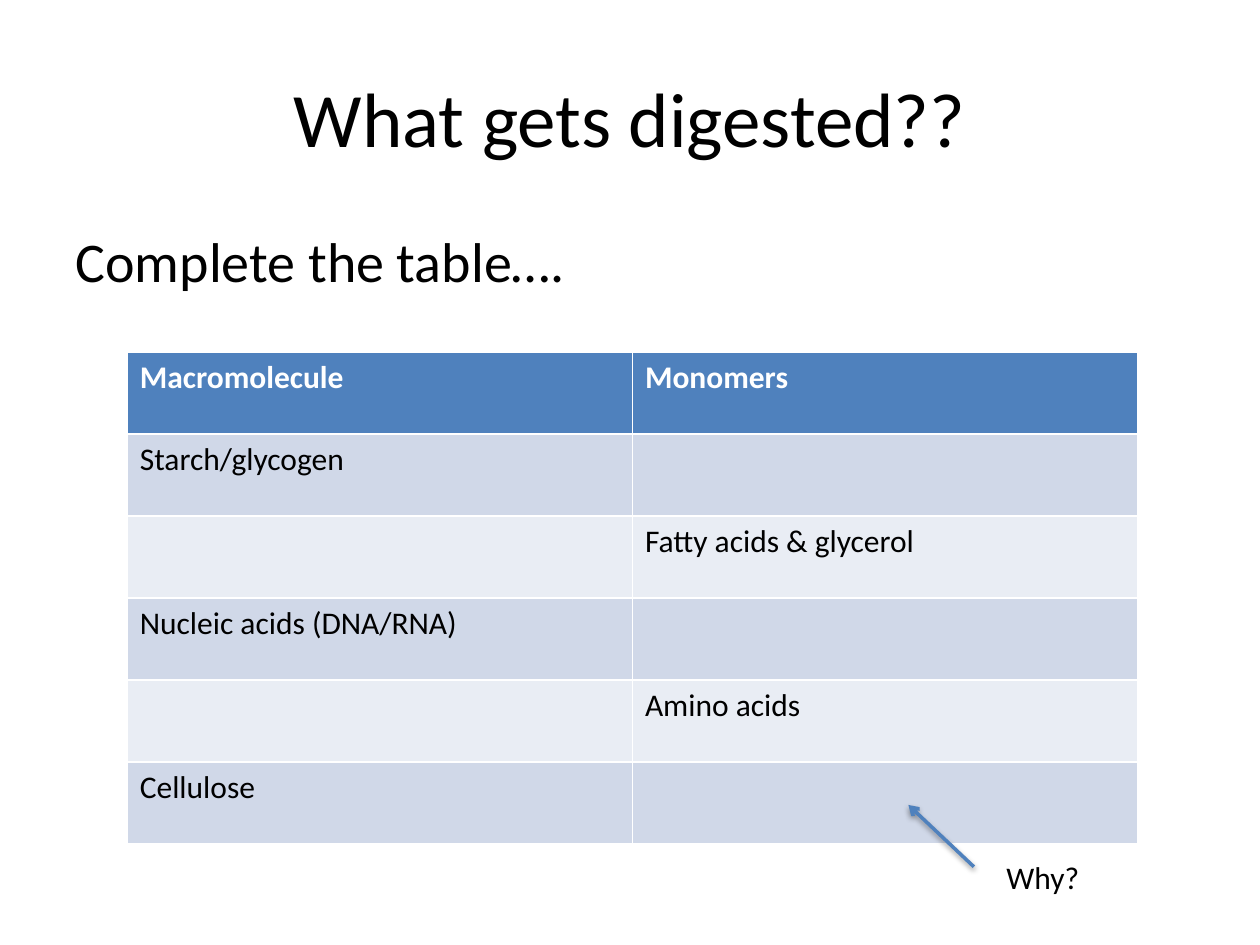
import pptx
import pptx.dml.color
import pptx.enum.shapes
import pptx.enum.text
import pptx.oxml
import pptx.util
from pptx.util import Pt

BLACK, WHITE, BLUE = "000000", "FFFFFF", "4F81BD"
BANDS = ["D0D8E8", "E9EDF4"]
ROWS = [
    ("Macromolecule", "Monomers"),
    ("Starch/glycogen", ""),
    ("", "Fatty acids & glycerol"),
    ("Nucleic acids (DNA/RNA)", ""),
    ("", "Amino acids"),
    ("Cellulose", ""),
]


def colour(value):
    return pptx.dml.color.RGBColor.from_string(value)


def write(frame, text, size, ink=BLACK, bold=False):
    para = frame.paragraphs[0]
    span = para.add_run()
    span.text = text
    formats = {"name": "Calibri", "size": Pt(size), "bold": bold}
    for name, value in formats.items():
        setattr(span.font, name, value)
    span.font.color.rgb = colour(ink)
    return para


def place(shape, box):
    for name, value in zip(("left", "top", "width", "height"), box):
        setattr(shape, name, Pt(value))


def add_title(page, box):
    title = page.shapes.title
    place(title, box)
    para = write(title.text_frame, "What gets digested??", 44)
    para.alignment = pptx.enum.text.PP_ALIGN.CENTER


def add_instruction(page, box):
    body = page.placeholders[1]
    place(body, box)
    para = write(body.text_frame, "Complete the table….", 32)
    properties = para._p.get_or_add_pPr()
    properties.set("marL", "0")
    properties.set("indent", "0")
    pptx.oxml.ns  # namespace helpers used by the element factory
    properties.append(pptx.oxml.parse_xml(
        f"<a:buNone {pptx.oxml.ns.nsdecls('a')}/>"))


def add_monomer_table(page, box):
    table = page.shapes.add_table(len(ROWS), 2, *map(Pt, box)).table
    for row_index, texts in enumerate(ROWS):
        header = row_index == 0
        fill = BLUE if header else BANDS[(row_index - 1) % 2]
        for column_index, text in enumerate(texts):
            cell = table.cell(row_index, column_index)
            cell.fill.solid()
            cell.fill.fore_color.rgb = colour(fill)
            if text:
                write(cell.text_frame, text, 18, WHITE if header else BLACK, header)


def add_question(page, box):
    """Place the question and the arrow from it to the last table cell."""
    left, top, width, height = box
    label = page.shapes.add_textbox(*map(Pt, box))
    label.text_frame.word_wrap = False
    label.text_frame.auto_size = pptx.enum.text.MSO_AUTO_SIZE.SHAPE_TO_FIT_TEXT
    write(label.text_frame, "Why?", 18)

    start_x, start_y = left - 11.5, top + 8.6
    arrow = page.shapes.add_connector(
        pptx.enum.shapes.MSO_CONNECTOR.STRAIGHT,
        *map(Pt, (start_x, start_y, start_x - 37.4, start_y - 35.3)))
    arrow.line.color.rgb = colour(BLUE)
    arrow.line.width = Pt(2)
    arrow.line._get_or_add_ln().append(pptx.oxml.parse_xml(
        f"<a:tailEnd {pptx.oxml.ns.nsdecls('a')} type='arrow'/>"))


def main():
    deck = pptx.Presentation()
    deck.slide_width, deck.slide_height = Pt(720), Pt(540)
    page = deck.slides.add_slide(deck.slide_layouts[1])
    add_title(page, (36, 21.6, 648, 90))
    add_instruction(page, (36, 126, 648, 356.4))
    add_monomer_table(page, (72.7, 201, 577.4, 281.4))
    add_question(page, (568, 486.7, 58.3, 29))
    deck.save("out.pptx")


if __name__ == "__main__":
    main()
